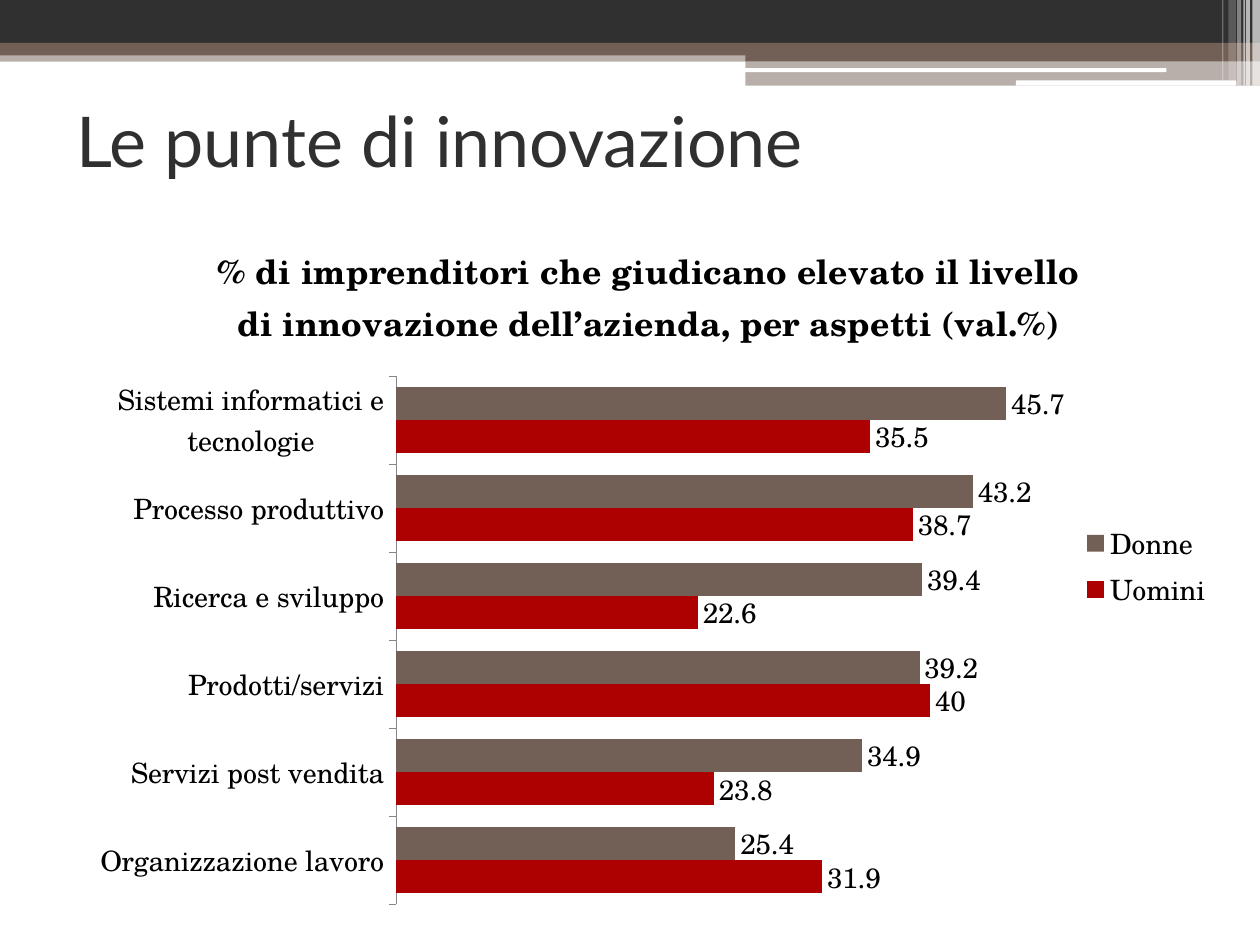
from dataclasses import dataclass

from lxml.etree import SubElement
from pptx import Presentation
from pptx.chart.data import CategoryChartData
from pptx.dml.color import RGBColor
from pptx.enum.chart import XL_CHART_TYPE, XL_LABEL_POSITION, XL_LEGEND_POSITION, XL_TICK_MARK
from pptx.enum.shapes import MSO_SHAPE
from pptx.enum.text import MSO_ANCHOR
from pptx.oxml import parse_xml
from pptx.oxml.ns import nsdecls, qn
from pptx.util import Pt


@dataclass(frozen=True)
class Theme:
    dark: str = "303030"
    brown: str = "726056"
    red: str = "AD0101"
    white: str = "FFFFFF"
    black: str = "000000"
    axis: str = "868686"
    heading_font: str = "Lato"
    chart_font: str = "TeX Gyre Schola"
    heading_size: float = 40
    chart_title_size: float = 19.2
    chart_size: float = 16


THEME = Theme()

# left, top, width, height, colour, opacity in percent
BANDS = [
    (0, 28.8, 720, 6.5, THEME.brown, 50),
    (0, 0, 720, 24.5, THEME.dark, 100),
    (0, 24.5, 720, 7.2, THEME.brown, 100),
    (426, 28, 294, 6.8, THEME.brown, 100),
    (426, 34.8, 294, 14.2, THEME.brown, 50),
]
ROUNDED_LINES = [(425.5, 39, 241, 2.2), (580.5, 46, 126, 3)]
# left, width, height, opacity in percent
STRIPES = [
    (715.7, 4.3, 49, 65),
    (712, 2.2, 49, 65),
    (710.6, 0.8, 49, 60),
    (707, 2.2, 49, 40),
    (702, 4.3, 46, 20),
    (698.4, 0.8, 46, 30),
]

CATEGORIES = [
    "Organizzazione lavoro", "Servizi post vendita", "Prodotti/servizi",
    "Ricerca e sviluppo", "Processo produttivo", "Sistemi informatici e tecnologie",
]
SERIES = [
    ("Uomini", [31.9, 23.8, 40, 22.6, 38.7, 35.5], THEME.red),
    ("Donne", [25.4, 34.9, 39.2, 39.4, 43.2, 45.7], THEME.brown),
]
CHART_TITLE = ("% di imprenditori che giudicano elevato il livello di "
               "innovazione dell’azienda, per aspetti (val.%)")


def format_font(font, name, size, color, bold=False):
    font.name = name
    font.size = Pt(size)
    font.bold = bold
    font.color.rgb = RGBColor.from_string(color)


def write_text(frame, text, **font_format):
    para = frame.paragraphs[0]
    span = para.add_run()
    span.text = text
    format_font(span.font, **font_format)


def place_plot(chart, **fractions):
    """Fix the inner plot area as fractions (x, y, w, h) of the chart."""
    area = chart.element.find(".//" + qn("c:plotArea"))
    for old in area.findall(qn("c:layout")):
        area.remove(old)
    modes = "".join(f'<c:{key}Mode val="edge"/>' for key in "xy")
    values = "".join(f'<c:{key} val="{value}"/>' for key, value in fractions.items())
    area.insert(0, parse_xml(
        f'<c:layout {nsdecls("c")}><c:manualLayout><c:layoutTarget val="inner"/>'
        f'{modes}{values}</c:manualLayout></c:layout>'))


class SlideBuilder:
    def __init__(self, page, theme):
        self.page = page
        self.theme = theme

    def block(self, left, top, width, height, color, opacity=100, kind=MSO_SHAPE.RECTANGLE):
        shape = self.page.shapes.add_shape(kind, Pt(left), Pt(top), Pt(width), Pt(height))
        shape.shadow.inherit = False
        shape.line.fill.background()
        shape.fill.solid()
        shape.fill.fore_color.rgb = RGBColor.from_string(color)
        if opacity < 100:
            tint = shape.fill._xPr.find(".//" + qn("a:srgbClr"))
            SubElement(tint, qn("a:alpha")).set("val", str(opacity * 1000))

    def heading(self, text, left, top, width, height):
        box = self.page.shapes.add_textbox(Pt(left), Pt(top), Pt(width), Pt(height))
        frame = box.text_frame
        frame.word_wrap = True
        frame.vertical_anchor = MSO_ANCHOR.MIDDLE
        write_text(frame, text, name=self.theme.heading_font,
                   size=self.theme.heading_size, color=self.theme.dark)

    def bar_chart(self, title, categories, series, left, top, width, height):
        theme = self.theme
        data = CategoryChartData()
        data.categories = categories
        for name, values, _ in series:
            data.add_series(name, values)
        chart = self.page.shapes.add_chart(
            XL_CHART_TYPE.BAR_CLUSTERED, Pt(left), Pt(top), Pt(width), Pt(height), data).chart
        format_font(chart.font, theme.chart_font, theme.chart_size, theme.black)

        chart.has_title = True
        write_text(chart.chart_title.text_frame, title, name=theme.chart_font,
                   size=theme.chart_title_size, color=theme.black, bold=True)
        chart.chart_title.include_in_layout = False
        chart.has_legend = True
        chart.legend.position = XL_LEGEND_POSITION.RIGHT
        chart.legend.include_in_layout = False

        value_axis = chart.value_axis
        value_axis.minimum_scale = 0
        value_axis.maximum_scale = 50
        value_axis.has_major_gridlines = False
        value_axis.visible = False
        category_axis = chart.category_axis
        category_axis.major_tick_mark = XL_TICK_MARK.OUTSIDE
        category_axis.format.line.color.rgb = RGBColor.from_string(theme.axis)
        category_axis.format.line.width = Pt(0.75)

        plot = chart.plots[0]
        plot.gap_width = 66
        plot.overlap = 0
        plot.vary_by_categories = False
        for bars, (_, _, color) in zip(plot.series, series):
            bars.format.fill.solid()
            bars.format.fill.fore_color.rgb = RGBColor.from_string(color)
            labels = bars.data_labels
            labels.show_value = True
            labels.position = XL_LABEL_POSITION.OUTSIDE_END
        place_plot(chart, x=0.28, y=0.23, w=0.58, h=0.75)


def main():
    deck = Presentation()
    deck.slide_width, deck.slide_height = Pt(720), Pt(540)
    page = deck.slides.add_slide(deck.slide_layouts[6])
    builder = SlideBuilder(page, THEME)
    for band in BANDS:
        builder.block(*band)
    for line in ROUNDED_LINES:
        builder.block(*line, THEME.white, kind=MSO_SHAPE.ROUNDED_RECTANGLE)
    for left, width, height, opacity in STRIPES:
        builder.block(left, 0, width, height, THEME.white, opacity)
    builder.heading("Le punte di innovazione", 36.7, 37.5, 648, 84)
    builder.bar_chart(CHART_TITLE, CATEGORIES, SERIES, 42.5, 122.4, 657.4, 402.5)
    deck.save("out.pptx")


if __name__ == "__main__":
    main()
